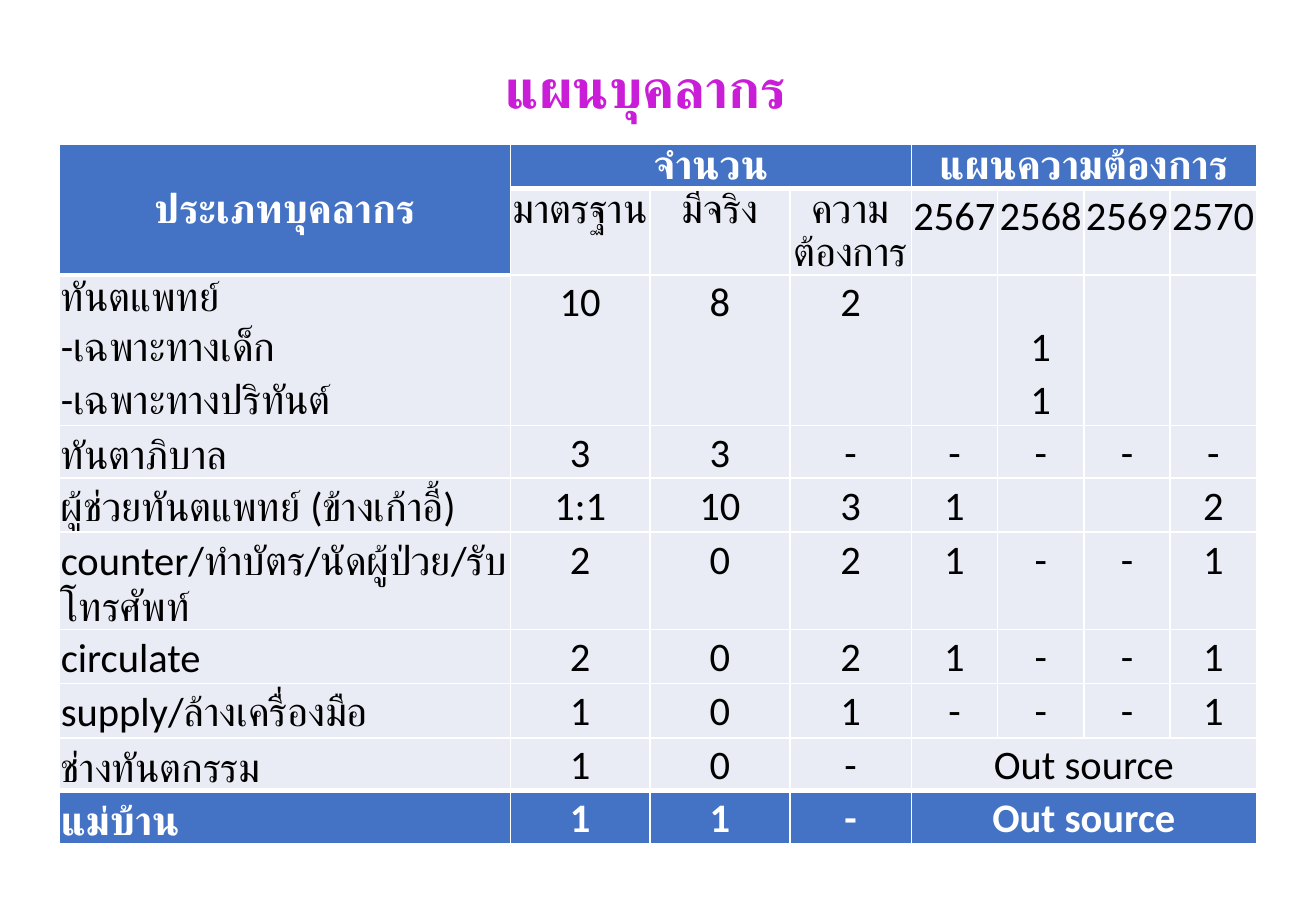
import lxml.etree
import pptx
import pptx.dml.color
import pptx.enum.text
import pptx.oxml.ns
import pptx.util

PX = 9144  # 100 px to the inch
ALIGN = pptx.enum.text.PP_ALIGN
ANCHOR = pptx.enum.text.MSO_ANCHOR

COLUMN_WIDTHS = [371, 115, 115, 100] + [71] * 4
ROW_HEIGHTS = [36, 39, 116] + [37] * 7
MERGES = [(0, 0, 1, 0), (0, 1, 0, 3), (0, 4, 0, 7), (8, 4, 8, 7), (9, 4, 9, 7)]
STAFF_PLAN = [
    ["ประเภทบุคลากร", "จำนวน", "", "", "แผนความต้องการ", "", "", ""],
    ["", "มาตรฐาน", "มีจริง", "ความต้องการ", "2567", "2568", "2569", "2570"],
    ["ทันตแพทย์\n-เฉพาะทางเด็ก\n-เฉพาะทางปริทันต์", "10", "8", "2", "", "1\n1", "", ""],
    ["ทันตาภิบาล", "3", "3", "-", "-", "-", "-", "-"],
    ["ผู้ช่วยทันตแพทย์ (ข้างเก้าอี้)", "1:1", "10", "3", "1", "", "", "2"],
    ["counter/ทำบัตร/นัดผู้ป่วย/รับโทรศัพท์", "2", "0", "2", "1", "-", "-", "1"],
    ["circulate", "2", "0", "2", "1", "-", "-", "1"],
    ["supply/ล้างเครื่องมือ", "1", "0", "1", "-", "-", "-", "1"],
    ["ช่างทันตกรรม", "1", "0", "-", "Out source", "", "", ""],
    ["แม่บ้าน", "1", "1", "-", "Out source", "", "", ""],
]
LAST_ROW = len(STAFF_PLAN) - 1


def px(length):
    return pptx.util.Emu(length * PX)


def color(value):
    return pptx.dml.color.RGBColor.from_string(value)


def is_banner(row, column):
    """Tell whether a cell belongs to the blue header or total row."""
    return row in (0, LAST_ROW) or (row, column) == (1, 0)


def has_heavy_bottom(row, column):
    return row == LAST_ROW - 1 or (row == 0 and column > 0) or (row < 2 and column == 0)


class SlideBuilder:
    font = "Calibri"
    accent, pale, white, black, magenta = "4472C4", "E9EBF5", "FFFFFF", "000000", "CA1DD7"

    def __init__(self, presentation):
        self.slide = presentation.slides.add_slide(presentation.slide_layouts[5])

    def format_text(self, text_frame, size, text_color, bold, alignment, spacing):
        for paragraph in text_frame.paragraphs:
            paragraph.alignment = alignment
            paragraph.line_spacing = spacing
            for run in paragraph.runs:
                run.font.name = self.font
                run.font.size = pptx.util.Pt(size)
                run.font.bold = bold
                run.font.color.rgb = color(text_color)

    def title(self, text, left, top, width, height):
        shape = self.slide.shapes.title
        shape.left, shape.top, shape.width, shape.height = map(px, (left, top, width, height))
        text_frame = shape.text_frame
        text_frame.text = text
        text_frame.auto_size = pptx.enum.text.MSO_AUTO_SIZE.NONE
        text_frame.vertical_anchor = ANCHOR.MIDDLE
        self.format_text(text_frame, 32, self.magenta, True, ALIGN.CENTER, 0.9)

    def borders(self, cell, top, bottom):
        properties = cell._tc.get_or_add_tcPr()
        for side, width in (("L", 1), ("R", 1), ("T", top), ("B", bottom)):
            line = lxml.etree.SubElement(properties, pptx.oxml.ns.qn(f"a:ln{side}"),
                                         w=str(pptx.util.Pt(width)))
            fill = lxml.etree.SubElement(line, pptx.oxml.ns.qn("a:solidFill"))
            lxml.etree.SubElement(fill, pptx.oxml.ns.qn("a:srgbClr"), val=self.white)

    def cell(self, cell, text, row, column):
        banner = is_banner(row, column)
        self.borders(cell, 3 if row and has_heavy_bottom(row - 1, column) else 1,
                     3 if has_heavy_bottom(row, column) else 1)
        cell.fill.solid()
        cell.fill.fore_color.rgb = color(self.accent if banner else self.pale)
        inset = px(1 if column == 0 else 0)
        cell.margin_left = cell.margin_top = cell.margin_right = inset
        cell.margin_bottom = 0
        label = column == 0 and row > 1
        if (row, column) == (0, 0):
            cell.vertical_anchor = ANCHOR.MIDDLE
        else:
            cell.vertical_anchor = ANCHOR.BOTTOM if label or "\n" in text else ANCHOR.TOP
        if text:
            cell.text_frame.text = text
        self.format_text(cell.text_frame, 24, self.white if banner else self.black, banner,
                         ALIGN.LEFT if label else ALIGN.CENTER, 1.07)

    def table(self, rows, left, top):
        frame = self.slide.shapes.add_table(
            len(rows), len(COLUMN_WIDTHS), px(left), px(top),
            px(sum(COLUMN_WIDTHS)), px(sum(ROW_HEIGHTS)))
        table = frame.table
        table.first_row = table.horz_banding = False
        for column, width in zip(table.columns, COLUMN_WIDTHS):
            column.width = px(width)
        for row, height in zip(table.rows, ROW_HEIGHTS):
            row.height = px(height)
        for row, texts in enumerate(rows):
            for column, text in enumerate(texts):
                self.cell(table.cell(row, column), text, row, column)
        for first_row, first_column, last_row, last_column in MERGES:
            table.cell(first_row, first_column).merge(table.cell(last_row, last_column))


def main():
    presentation = pptx.Presentation()
    presentation.slide_width, presentation.slide_height = px(1083), px(750)
    builder = SlideBuilder(presentation)
    builder.title("แผนบุคลากร\t", 74, 40, 934, 70)
    builder.table(STAFF_PLAN, 49, 119)
    presentation.save("out.pptx")


if __name__ == "__main__":
    main()
